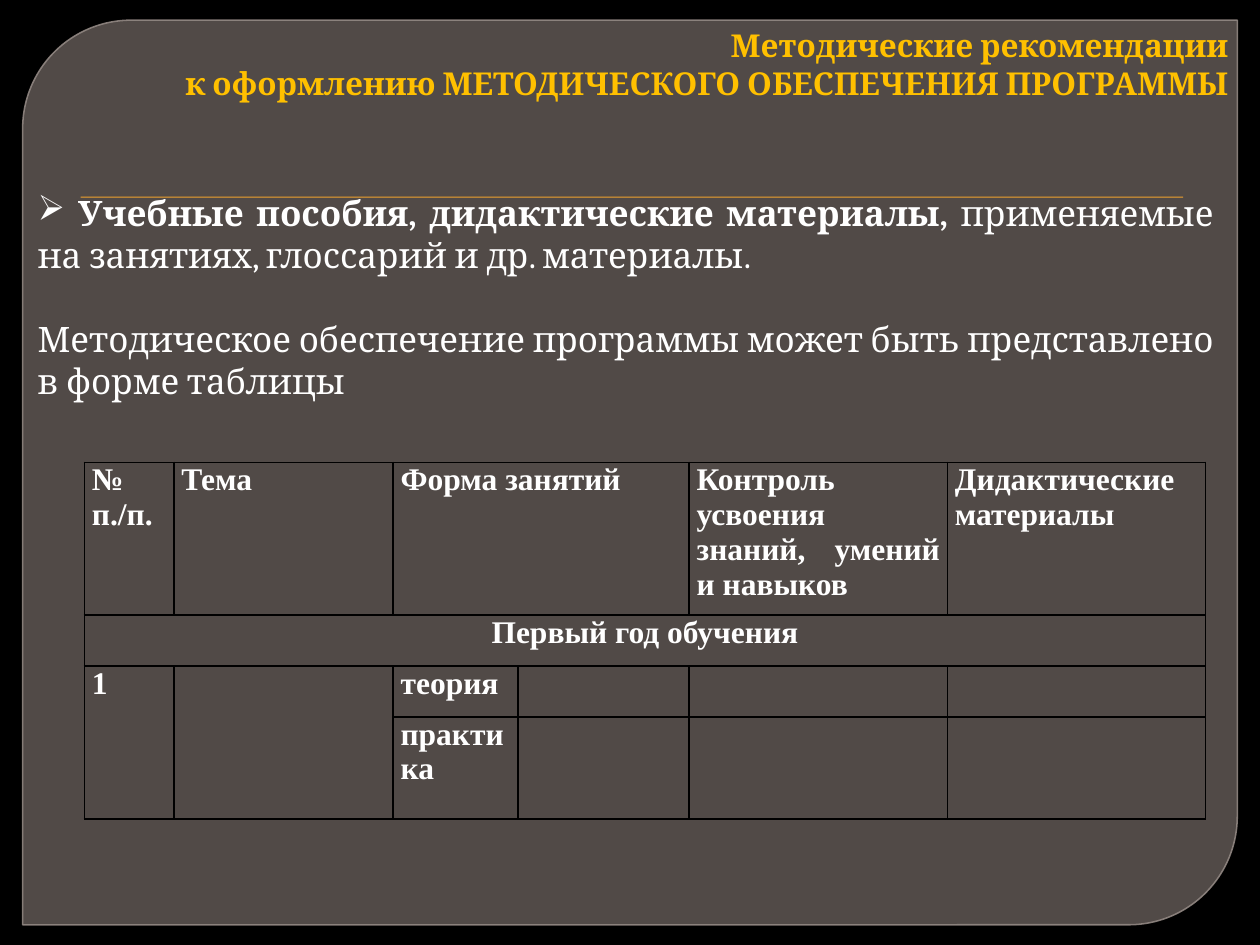
from pptx import Presentation
from pptx.dml.color import RGBColor as RGB
from pptx.enum.shapes import MSO_SHAPE as Shape
from pptx.enum.text import PP_ALIGN as Align
from pptx.oxml import parse_xml
from pptx.oxml.ns import nsdecls, qn
from pptx.oxml.xmlchemy import OxmlElement as Node
from pptx.util import Inches, Pt

HEX = {"back": "000000", "panel": "7D726E", "edge": "948A85", "rule": "F0A22E",
       "text": "FFFFFF", "title": "FFC000", "grid": "000000"}


def hue(name):
    return RGB.from_string(HEX[name])


def fade(fmt, share):
    """Set the opacity, in percent, of a solid fill."""
    alpha = Node("a:alpha")
    alpha.set("val", str(share * 1000))
    fmt._xPr.find(qn("a:solidFill"))[0].append(alpha)


def write(frame, paras, size=20, font="Cambria", color="text", bold=False,
          align=Align.JUSTIFY, gap=0, bullet=None):
    """Fill a frame; a paragraph is a string or a list of (text, bold) runs."""
    for i, runs in enumerate(paras):
        para = frame.add_paragraph() if i else frame.paragraphs[0]
        para.alignment = align
        if i:
            para.space_before = Pt(gap)
        elif bullet:
            mark = Node("a:buChar")
            mark.set("char", bullet)
            para._p.get_or_add_pPr().append(mark)
        for text, heavy in [(runs, bold)] if isinstance(runs, str) else runs:
            run = para.add_run()
            run.text = text
            face = run.font
            face.size, face.name, face.bold = Pt(size), font, heavy
            face.color.rgb = hue(color)


class Deck:
    """Places elements by percent of the slide's width and height."""

    def __init__(self, wide, high):
        self.file = Presentation()
        self.wide = self.file.slide_width = Inches(wide)
        self.high = self.file.slide_height = Inches(high)
        self.slide = self.file.slides.add_slide(self.file.slide_layouts[6])
        back = self.slide.background.fill
        back.solid()
        back.fore_color.rgb = hue("back")

    def area(self, x, y, w, h):
        return [int(self.wide * x / 100), int(self.high * y / 100),
                int(self.wide * w / 100), int(self.high * h / 100)]

    def shape(self, kind, box, fill, clear=100):
        item = self.slide.shapes.add_shape(kind, *self.area(*box))
        item.shadow.inherit = False
        item.fill.solid()
        item.fill.fore_color.rgb = hue(fill)
        fade(item.fill, clear)
        item.line.fill.background()
        return item

    def panel(self, box):
        item = self.shape(Shape.ROUND_2_DIAG_RECTANGLE, box, "panel", 65)
        item.adjustments[0], item.adjustments[1] = 0.12, 0
        item.line.width = Pt(0.87)
        item.line.color.rgb = hue("edge")
        fade(item.line.fill, 88)

    def text(self, box, paras, **style):
        frame = self.slide.shapes.add_textbox(*self.area(*box)).text_frame
        frame.word_wrap = True
        write(frame, paras, **style)

    def table(self, box, cols, rows, spans, words, **style):
        """cols and rows are weights; words maps (row, column) to
        (text, alignment); spans lists pairs of corner cells."""
        x, y, w, h = self.area(*box)
        grid = self.slide.shapes.add_table(len(rows), len(cols), x, y, w, h).table
        grid.first_row = grid.horz_banding = False
        for col, part in zip(grid.columns, cols):
            col.width = int(w * part / sum(cols))
        for row, part in zip(grid.rows, rows):
            row.height = int(h * part / sum(rows))
        for cell in grid.iter_cells():
            cell.margin_left = cell.margin_right = Inches(0.06)
            cell.margin_top = cell.margin_bottom = 0
            cell.fill.background()
            self.border(cell)
        for start, end in spans:
            grid.cell(*start).merge(grid.cell(*end))
        for spot, (text, align) in words.items():
            write(grid.cell(*spot).text_frame, [text], align=align, **style)

    def border(self, cell):
        props = cell._tc.get_or_add_tcPr()
        for i, side in enumerate("LRTB"):
            props.insert(i, parse_xml(
                f'<a:ln{side} {nsdecls("a")} w="{Pt(1)}"><a:solidFill>'
                f'<a:srgbClr val="{HEX["grid"]}"/></a:solidFill></a:ln{side}>'))


def main():
    deck = Deck(10, 7.5)
    deck.panel((1.8, 2.13, 96.4, 95.73))
    deck.shape(Shape.RECTANGLE, (6.4, 20.8, 87.5, 0.13), "rule")
    deck.text((2, 19.6, 95.3, 23.73), [
        [(" Учебные пособия, дидактические материалы, ", True),
         ("применяемые на занятиях, глоссарий и др. материалы.", False)],
        "Методическое обеспечение программы может быть представлено в форме таблицы",
    ], gap=24, bullet="➢")
    deck.text((1.6, 2.13, 96.9, 9.47), [
        "Методические рекомендации",
        "к оформлению МЕТОДИЧЕСКОГО ОБЕСПЕЧЕНИЯ ПРОГРАММЫ",
    ], size=18, color="title", bold=True, align=Align.RIGHT)

    heads = {0: "№ п./п.", 1: "Тема", 2: "Форма занятий",
             4: "Контроль усвоения знаний, умений и навыков",
             5: "Дидактические материалы"}
    words = {(0, col): (text, Align.JUSTIFY) for col, text in heads.items()}
    words |= {(1, 0): ("Первый год обучения", Align.CENTER),
              (2, 0): ("1", Align.JUSTIFY),
              (2, 2): ("теория", Align.JUSTIFY),
              (3, 2): ("практика", Align.JUSTIFY)}
    spans = [((0, 2), (0, 3)), ((1, 0), (1, 5)),
             ((2, 0), (3, 0)), ((2, 1), (3, 1))]
    deck.table((6.7, 48.93, 89, 37.73), (71, 174, 99, 136, 205, 205),
               (3, 1, 1, 2), spans, words,
               size=18, font="Times New Roman", bold=True)
    deck.file.save("out.pptx")


if __name__ == "__main__":
    main()
